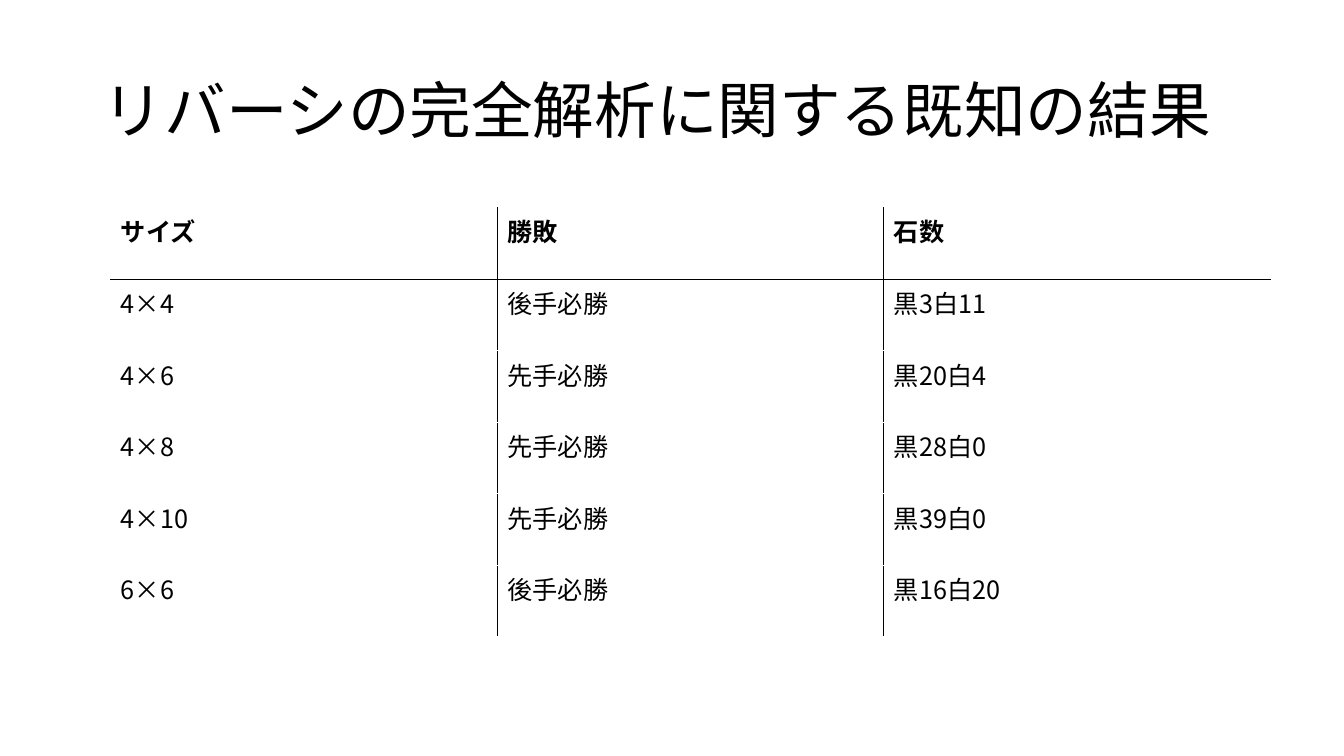
import pptx
import pptx.util
import pptx.dml.color
import pptx.enum.text
import pptx.oxml.ns
from lxml import etree

FONT = "Noto Sans CJK JP"
INK, PAPER = "000000", "FFFFFF"
WIDE, HIGH = 13.33, 7.5
HEAD = "リバーシの完全解析に関する既知の結果"
ROWS = [
    ("サイズ", "勝敗", "石数"),
    ("4×4", "後手必勝", "黒3白11"),
    ("4×6", "先手必勝", "黒20白4"),
    ("4×8", "先手必勝", "黒28白0"),
    ("4×10", "先手必勝", "黒39白0"),
    ("6×6", "後手必勝", "黒16白20"),
]


def tint(code):
    return pptx.dml.color.RGBColor.from_string(code)


def style(run, size, bold=False):
    look = {"size": pptx.util.Pt(size), "bold": bold, "name": FONT}
    for key, value in look.items():
        setattr(run.font, key, value)
    run.font.color.rgb = tint(INK)
    east = etree.SubElement(run.font._element, pptx.oxml.ns.qn("a:ea"))
    east.set("typeface", FONT)


def edge(cell, side, code):
    qn = pptx.oxml.ns.qn
    line = etree.SubElement(cell._tc.get_or_add_tcPr(), qn("a:ln" + side))
    line.set("w", str(pptx.util.Pt(1)))
    fill = etree.SubElement(line, qn("a:solidFill"))
    etree.SubElement(fill, qn("a:srgbClr")).set("val", code)


def title(slide, box):
    shape = slide.shapes.title
    for key, value in zip(("left", "top", "width", "height"), box):
        setattr(shape, key, pptx.util.Inches(value))
    frame = shape.text_frame
    look = {"word_wrap": True,
            "auto_size": pptx.enum.text.MSO_AUTO_SIZE.NONE,
            "vertical_anchor": pptx.enum.text.MSO_ANCHOR.MIDDLE}
    for key, value in look.items():
        setattr(frame, key, value)
    para = frame.paragraphs[0]
    look = {"alignment": pptx.enum.text.PP_ALIGN.LEFT, "line_spacing": 0.9}
    for key, value in look.items():
        setattr(para, key, value)
    run = para.add_run()
    run.text = HEAD
    style(run, 44)


def grid(slide, box):
    count, span = len(ROWS), len(ROWS[0])
    table = slide.shapes.add_table(
        count, span, *map(pptx.util.Inches, box)).table
    for r, row in enumerate(ROWS):
        for c, text in enumerate(row):
            cell = table.cell(r, c)
            sides = {
                "L": INK if c else PAPER,
                "R": INK if c < span - 1 else PAPER,
                "T": INK if r == 1 else PAPER,
                "B": INK if r == 0 else PAPER,
            }
            for side, code in sides.items():
                edge(cell, side, code)
            cell.fill.solid()
            cell.fill.fore_color.rgb = tint(PAPER)
            run = cell.text_frame.paragraphs[0].add_run()
            run.text = text
            style(run, 18, r == 0)


def main():
    deck = pptx.Presentation()
    deck.slide_width = pptx.util.Inches(WIDE)
    deck.slide_height = pptx.util.Inches(HIGH)
    slide = deck.slides.add_slide(deck.slide_layouts[5])
    title(slide, (0.92, 0.4, 11.5, 1.45))
    grid(slide, (1.1, 2.06, 11.5, 4.26))
    deck.save("out.pptx")


if __name__ == "__main__":
    main()
